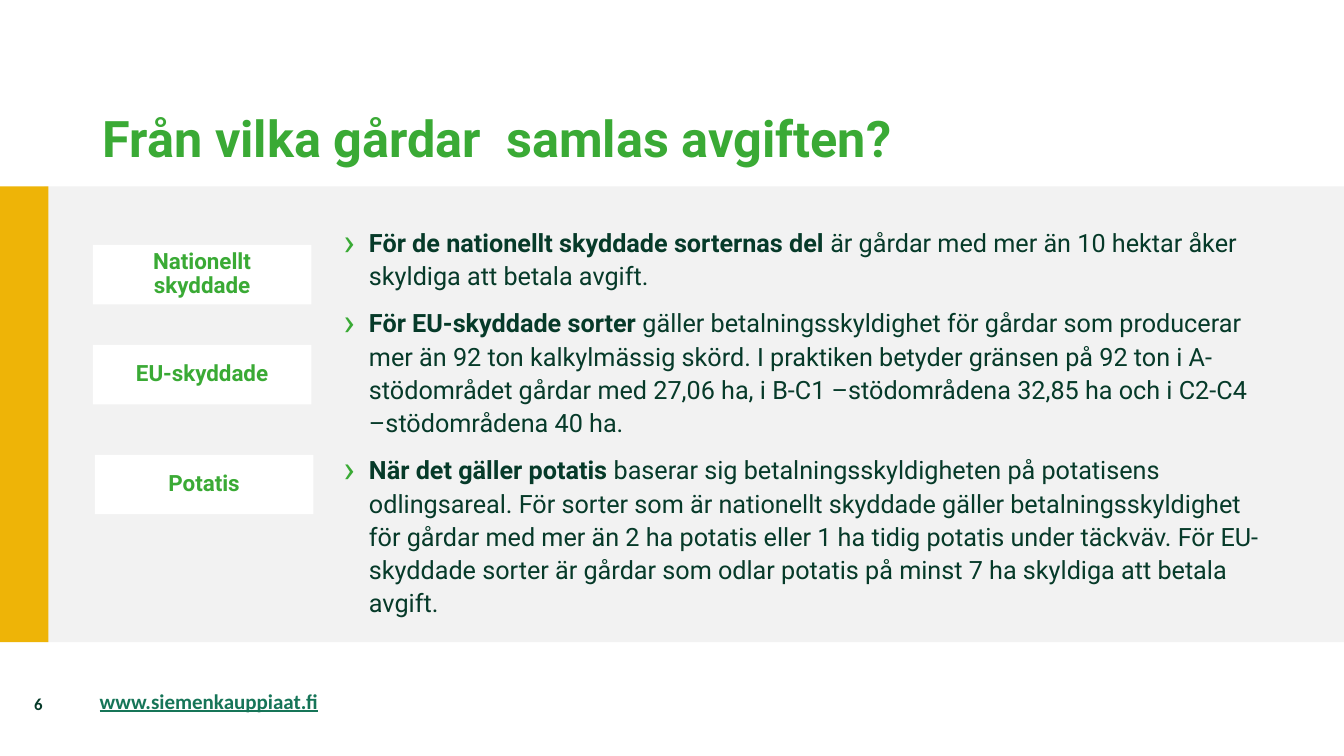
from dataclasses import dataclass

import lxml.etree
import pptx
import pptx.dml.color
import pptx.enum.shapes
import pptx.enum.text
import pptx.oxml.ns
import pptx.util
from pptx.util import Cm

GREEN = "3AAA35"
DARK = "063A29"
ALIGN = pptx.enum.text.PP_ALIGN
ANCHOR = pptx.enum.text.MSO_ANCHOR


@dataclass(frozen=True)
class Frame:
    left: float
    top: float
    width: float
    height: float

    def lengths(self) -> tuple:
        return Cm(self.left), Cm(self.top), Cm(self.width), Cm(self.height)


@dataclass(frozen=True)
class Style:
    size: float
    colour: str
    font: str = "Roboto"
    bold: bool = True
    underline: bool = False


@dataclass(frozen=True)
class Label:
    text: str
    left: float
    top: float


@dataclass(frozen=True)
class Rule:
    lead: str
    rest: str


LABELS = [
    Label("Nationellt skyddade", 2.34, 6.17),
    Label("EU-skyddade", 2.34, 8.69),
    Label("Potatis", 2.39, 11.46),
]

RULES = [
    Rule(
        "För de nationellt skyddade sorternas del",
        " är gårdar med mer än 10 hektar åker skyldiga att betala avgift.",
    ),
    Rule(
        "För EU-skyddade sorter ",
        "gäller betalningsskyldighet för gårdar som producerar mer än 92 ton "
        "kalkylmässig skörd. I praktiken betyder gränsen på 92 ton i "
        "A-stödområdet gårdar med 27,06 ha, i B-C1 –stödområdena 32,85 ha "
        "och i C2-C4 –stödområdena 40 ha.",
    ),
    Rule(
        "När det gäller potatis",
        " baserar sig betalningsskyldigheten på potatisens odlingsareal. För "
        "sorter som är nationellt skyddade gäller betalningsskyldighet för "
        "gårdar med mer än 2 ha potatis eller 1 ha tidig potatis under "
        "täckväv. För EU-skyddade sorter är gårdar som odlar potatis på minst "
        "7 ha skyldiga att betala avgift.",
    ),
]


def rgb(colour: str):
    return pptx.dml.color.RGBColor.from_string(colour)


def add_span(para, text: str, style: Style) -> None:
    span = para.add_run()
    span.text = text
    span.font.size = pptx.util.Pt(style.size)
    span.font.name = style.font
    span.font.bold = style.bold
    span.font.underline = style.underline
    span.font.color.rgb = rgb(style.colour)


def add_block(page, frame: Frame, colour: str):
    block = page.shapes.add_shape(
        pptx.enum.shapes.MSO_SHAPE.RECTANGLE, *frame.lengths()
    )
    block.shadow.inherit = False
    block.fill.solid()
    block.fill.fore_color.rgb = rgb(colour)
    block.line.fill.background()
    return block


def add_box(page, frame: Frame, anchor):
    box = page.shapes.add_textbox(*frame.lengths())
    box.text_frame.word_wrap = True
    box.text_frame.vertical_anchor = anchor
    return box.text_frame


def add_line(page, frame: Frame, text: str, style: Style, anchor) -> None:
    para = add_box(page, frame, anchor).paragraphs[0]
    para.line_spacing = 0.9
    add_span(para, text, style)


def add_label(page, label: Label) -> None:
    block = add_block(page, Frame(label.left, label.top, 5.51, 1.5), "FFFFFF")
    text = block.text_frame
    text.word_wrap = True
    text.vertical_anchor = ANCHOR.MIDDLE
    text.margin_left = text.margin_right = Cm(1)
    text.margin_top = text.margin_bottom = Cm(0)
    para = text.paragraphs[0]
    para.alignment = ALIGN.CENTER
    para.line_spacing = 0.9
    add_span(para, label.text, Style(16, GREEN))


def add_bullet(para) -> None:
    properties = para._p.get_or_add_pPr()
    indent = Cm(0.64)
    properties.set("marL", str(indent))
    properties.set("indent", str(-indent))
    name = pptx.oxml.ns.qn
    colour = lxml.etree.SubElement(properties, name("a:buClr"))
    lxml.etree.SubElement(colour, name("a:srgbClr"), val=GREEN)
    lxml.etree.SubElement(properties, name("a:buSzPct"), val="150000")
    lxml.etree.SubElement(properties, name("a:buFont"), typeface="Roboto")
    lxml.etree.SubElement(properties, name("a:buChar"), char="›")


def add_rules(page, frame: Frame, rules: list[Rule]) -> None:
    text = add_box(page, frame, ANCHOR.MIDDLE)
    for index, rule in enumerate(rules):
        para = text.add_paragraph() if index else text.paragraphs[0]
        para.line_spacing = 1.1
        if index:
            para.space_before = pptx.util.Pt(10)
        add_bullet(para)
        add_span(para, rule.lead, Style(18, DARK))
        add_span(para, rule.rest, Style(18, DARK, bold=False))


def main() -> None:
    deck = pptx.Presentation()
    deck.slide_width = Cm(33.87)
    deck.slide_height = Cm(19.05)
    page = deck.slides.add_slide(deck.slide_layouts[6])

    add_block(page, Frame(1.12, 4.7, 32.75, 11.48), "F2F2F2")
    add_block(page, Frame(0, 4.7, 1.22, 11.48), "EEB407")
    add_line(
        page,
        Frame(2.34, 1.02, 29.9, 3.35),
        "Från vilka gårdar  samlas avgiften?",
        Style(36, GREEN),
        ANCHOR.BOTTOM,
    )
    add_rules(page, Frame(8.41, 5.72, 23.83, 9.78), RULES)
    for label in LABELS:
        add_label(page, label)

    number = add_box(page, Frame(0.61, 17.22, 1.04, 1.02), ANCHOR.MIDDLE)
    add_span(number.paragraphs[0], "6", Style(12, DARK, "Calibri"))
    address = add_box(page, Frame(2.26, 17.22, 6.5, 0.89), ANCHOR.TOP)
    add_span(
        address.paragraphs[0],
        "www.siemenkauppiaat.fi",
        Style(15, "167558", "Calibri", underline=True),
    )
    deck.save("out.pptx")


if __name__ == "__main__":
    main()
